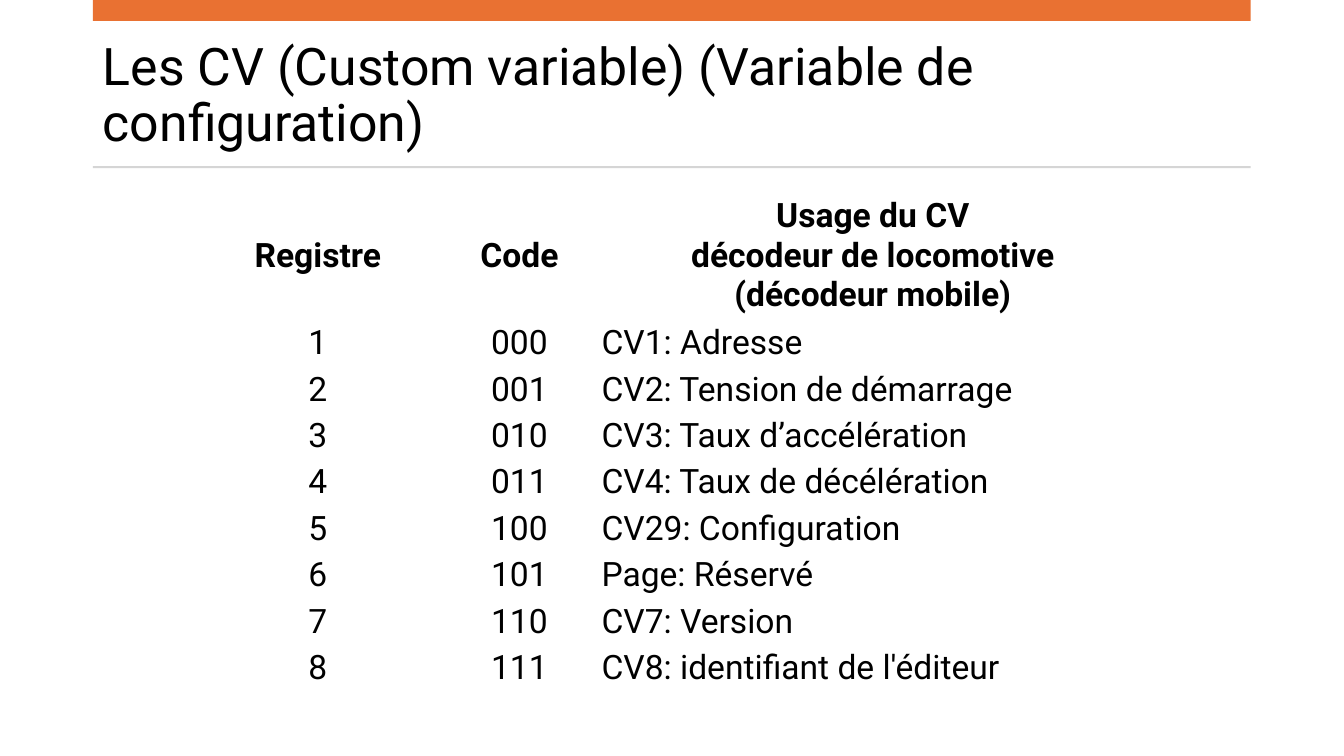
"""Build the slide that lists the registers of a locomotive decoder."""
from dataclasses import dataclass

from pptx import Presentation
from pptx.dml.color import RGBColor
from pptx.enum.shapes import MSO_SHAPE
from pptx.enum.text import MSO_ANCHOR, MSO_AUTO_SIZE, PP_ALIGN
from pptx.slide import Slide
from pptx.table import _Cell
from pptx.util import Cm, Pt

FONT = "Roboto"
BLACK, WHITE = "000000", "FFFFFF"
LEFT, WIDTH = 2.34, 29.18
TITLE = "Les CV (Custom variable) (Variable de configuration)"
HEADS = ["Registre", "Code", "Usage du CV\ndécodeur de locomotive\n(décodeur mobile)"]
USES = [
    "CV1: Adresse",
    "CV2: Tension de démarrage",
    "CV3: Taux d’accélération",
    "CV4: Taux de décélération",
    "CV29: Configuration",
    "Page: Réservé",
    "CV7: Version",
    "CV8: identifiant de l'éditeur",
]
COLS = [6.02, 4.14, 13.67]
HEAD, ROW = 3.23, 1.17


@dataclass
class Bar:
    top: float
    height: float
    fill: str


BARS = [Bar(0, 0.53, "E97132"), Bar(4.19, 0.05, "D5D5D5")]


def color(code: str) -> RGBColor:
    return RGBColor.from_string(code)


def write(para, text: str, size: float, bold: bool = False) -> None:
    for i, line in enumerate(text.split("\n")):
        if i:
            para.add_line_break()
        run = para.add_run()
        run.text = line
        run.font.name = FONT
        run.font.size = Pt(size)
        run.font.bold = bold
        run.font.color.rgb = color(BLACK)


def draw_title(slide: Slide) -> None:
    title = slide.shapes.title
    title.left, title.top = Cm(LEFT), Cm(0.94)
    title.width, title.height = Cm(WIDTH), Cm(3)
    frame = title.text_frame
    frame.word_wrap = True
    frame.auto_size = MSO_AUTO_SIZE.NONE
    frame.vertical_anchor = MSO_ANCHOR.MIDDLE
    para = frame.paragraphs[0]
    para.alignment = PP_ALIGN.LEFT
    para.line_spacing = 0.9
    write(para, TITLE, 37)


def draw_bar(slide: Slide, bar: Bar) -> None:
    shape = slide.shapes.add_shape(
        MSO_SHAPE.RECTANGLE, Cm(LEFT), Cm(bar.top), Cm(WIDTH), Cm(bar.height))
    shape.shadow.inherit = False
    shape.fill.solid()
    shape.fill.fore_color.rgb = color(bar.fill)
    shape.line.fill.background()


def fill_cell(cell: _Cell, text: str, head: bool, mid: bool) -> None:
    cell.fill.solid()
    cell.fill.fore_color.rgb = color(WHITE)
    cell.vertical_anchor = MSO_ANCHOR.MIDDLE
    cell.margin_left = cell.margin_right = cell.margin_top = cell.margin_bottom = 0
    para = cell.text_frame.paragraphs[0]
    para.alignment = PP_ALIGN.CENTER if mid else PP_ALIGN.LEFT
    write(para, text, 24, head)


def draw_table(slide: Slide) -> None:
    rows = [HEADS] + [[str(n + 1), f"{n:03b}", use] for n, use in enumerate(USES)]
    table = slide.shapes.add_table(
        len(rows), len(COLS), Cm(5), Cm(4.83),
        Cm(sum(COLS)), Cm(HEAD + ROW * len(USES))).table
    table.horz_banding = table.first_row = False
    for col, width in zip(table.columns, COLS):
        col.width = Cm(width)
    for r, texts in enumerate(rows):
        head = r == 0
        table.rows[r].height = Cm(HEAD if head else ROW)
        for c, text in enumerate(texts):
            fill_cell(table.cell(r, c), text, head, head or c < 2)


def main() -> None:
    deck = Presentation()
    deck.slide_width, deck.slide_height = Cm(33.87), Cm(19.05)
    slide = deck.slides.add_slide(deck.slide_layouts[5])
    slide.background.fill.solid()
    slide.background.fill.fore_color.rgb = color(WHITE)
    draw_title(slide)
    for bar in BARS:
        draw_bar(slide, bar)
    draw_table(slide)
    deck.save("out.pptx")


if __name__ == "__main__":
    main()
